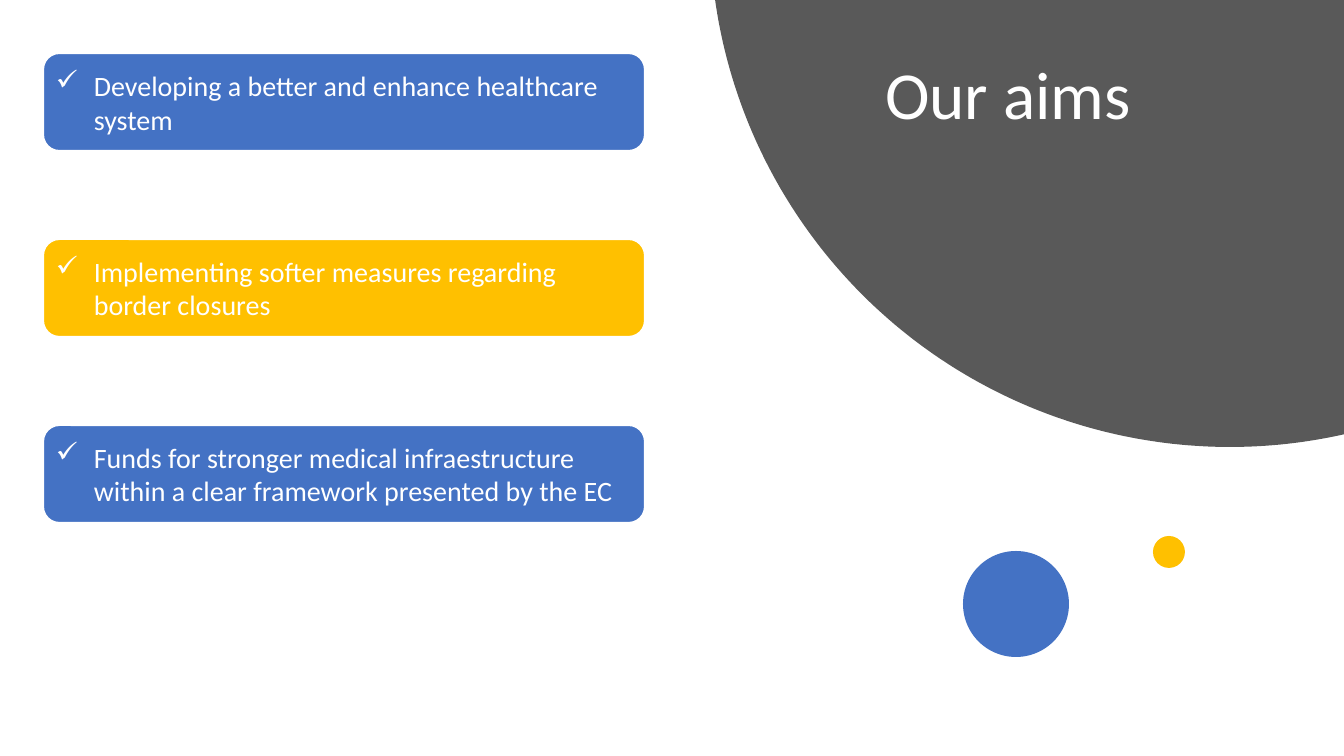
from math import asin, acos, cos, pi, sin

from lxml.etree import SubElement
from pptx import Presentation
from pptx.dml.color import RGBColor
from pptx.enum.shapes import MSO_SHAPE as Shape
from pptx.enum.text import MSO_ANCHOR as Anchor, PP_ALIGN as Align
from pptx.oxml.ns import qn
from pptx.util import Pt

COLORS = {"blue": "4472C4", "gold": "FFC000", "gray": "595959", "white": "FFFFFF"}
TITLE = "Our aims"
AIMS = [
    ("Developing a better and enhance healthcare system", "blue"),
    ("Implementing softer measures regarding border closures", "gold"),
    ("Funds for stronger medical infraestructure within a clear framework "
     "presented by the EC", "blue"),
]
DOTS = [(963, 551, 106, "blue"), (1153, 536, 32, "gold")]  # left, top, diameter

SLIDE_WIDTH, SLIDE_HEIGHT = 1344, 756
TITLE_BOX = (875, 2, 816, 192)
AIM_LEFT, AIM_TOP, AIM_WIDTH, AIM_HEIGHT, AIM_STEP = 43, 53, 602, 98, 186
AIM_INSET, BULLET_INDENT = 8, 38
DISC_X, DISC_Y, DISC_RADIUS, DISC_STEPS = 1230, -73, 520, 120
EMU_PER_PX = 914400 / 100.8


def px(length):
    return round(length * EMU_PER_PX)


def color(name):
    return RGBColor.from_string(COLORS[name])


def paint(shape, fill, line=None):
    shape.shadow.inherit = False
    shape.fill.solid()
    shape.fill.fore_color.rgb = color(fill)
    if line:
        shape.line.color.rgb = color(line)
        shape.line.width = Pt(1.5)
    else:
        shape.line.fill.background()


def write(shape, text, size, inset=10, bullet=None, spacing=None):
    frame = shape.text_frame
    frame.word_wrap = True
    frame.vertical_anchor = Anchor.MIDDLE
    frame.margin_left = frame.margin_right = px(inset)
    paragraph = frame.paragraphs[0]
    paragraph.text = text
    paragraph.alignment = Align.LEFT
    if spacing:
        paragraph.line_spacing = spacing
    if bullet:
        properties = paragraph._p.get_or_add_pPr()
        properties.set("marL", str(px(BULLET_INDENT)))
        properties.set("indent", str(-px(BULLET_INDENT)))
        SubElement(properties, qn("a:buChar")).set("char", bullet)
    font = paragraph.runs[0].font
    font.name, font.size = "Calibri", Pt(size)
    font.color.rgb = color("white")


def add_cropped_disc(shapes):
    """Draw the part of the large disc that lies inside the top right corner."""
    start = pi - asin(-DISC_Y / DISC_RADIUS)
    end = acos((SLIDE_WIDTH - DISC_X) / DISC_RADIUS)
    angles = [start + (end - start) * i / DISC_STEPS for i in range(DISC_STEPS + 1)]
    arc = [(px(DISC_X + DISC_RADIUS * cos(angle)), px(DISC_Y + DISC_RADIUS * sin(angle)))
           for angle in angles]
    builder = shapes.build_freeform(*arc[0])
    builder.add_line_segments(arc[1:] + [(px(SLIDE_WIDTH), 0)], close=True)
    paint(builder.convert_to_shape(), "gray")


def main():
    presentation = Presentation()
    presentation.slide_width = px(SLIDE_WIDTH)
    presentation.slide_height = px(SLIDE_HEIGHT)
    slide = presentation.slides.add_slide(presentation.slide_layouts[5])
    shapes = slide.shapes
    title = shapes.title

    add_cropped_disc(shapes)
    for left, top, diameter, fill in DOTS:
        dot = shapes.add_shape(Shape.OVAL, px(left), px(top), px(diameter), px(diameter))
        paint(dot, fill)

    title.left, title.top, title.width, title.height = map(px, TITLE_BOX)
    write(title, TITLE, 48, spacing=0.9)
    shapes._spTree.append(title._element)  # bring the title in front of the disc

    for row, (text, fill) in enumerate(AIMS):
        box = shapes.add_shape(Shape.ROUNDED_RECTANGLE, px(AIM_LEFT),
                               px(AIM_TOP + row * AIM_STEP), px(AIM_WIDTH), px(AIM_HEIGHT))
        paint(box, fill, line="white")
        write(box, text, 20, inset=AIM_INSET, bullet="✓")

    presentation.save("out.pptx")


if __name__ == "__main__":
    main()
